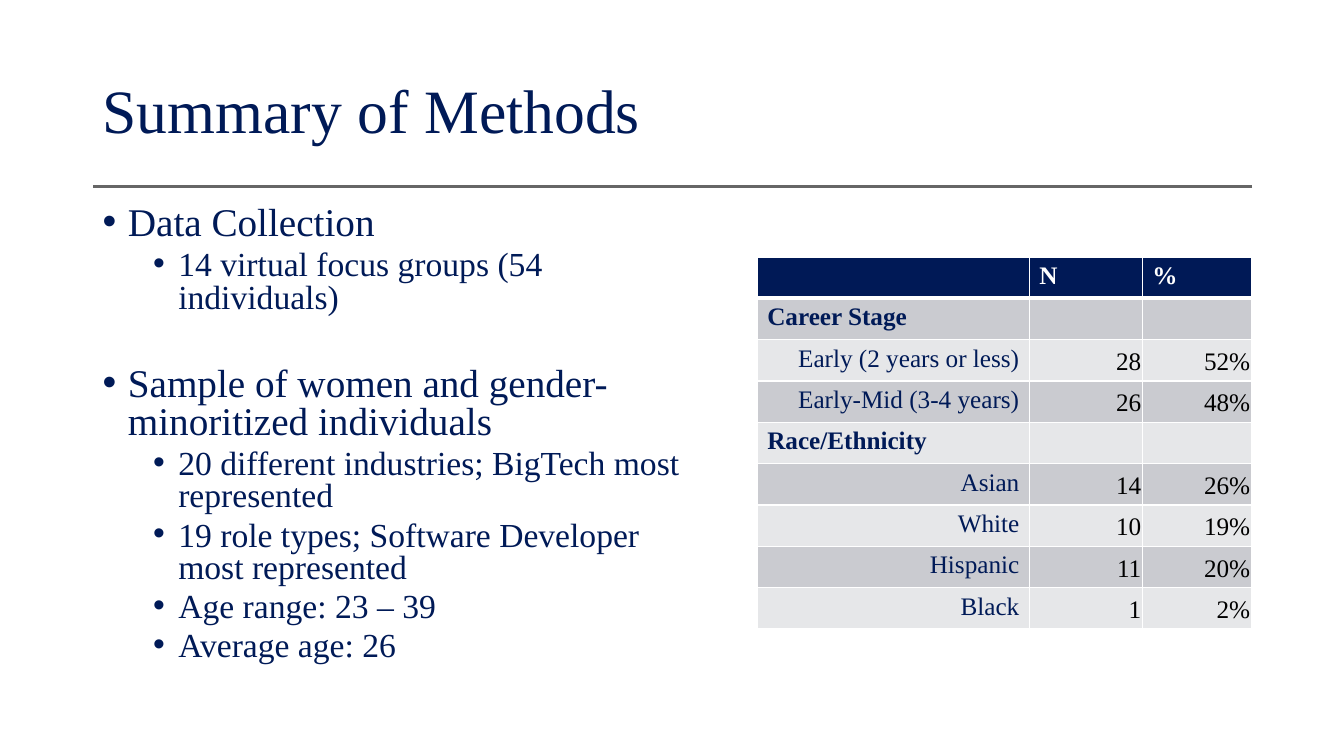
from dataclasses import dataclass

import pptx
import pptx.dml.color
import pptx.enum.shapes
import pptx.enum.text
import pptx.oxml
import pptx.oxml.ns
import pptx.util
from pptx.util import Inches

ALIGN = pptx.enum.text.PP_ALIGN
ANCHOR = pptx.enum.text.MSO_ANCHOR


@dataclass(frozen=True)
class Theme:
    font: str = "Times New Roman"
    navy: str = "001A57"
    header: str = "001956"
    bands: tuple = ("CACBD0", "E6E7E9")
    rule: str = "666666"
    white: str = "FFFFFF"
    black: str = "000000"
    title: int = 44
    topic: int = 28
    detail: int = 24
    cell: int = 18


THEME = Theme()

METHODS = [
    (0, "Data Collection", 0),
    (1, "14 virtual focus groups (54 individuals)", 5),
    (0, "Sample of women and gender-minoritized individuals", 37),
    (1, "20 different industries; BigTech most represented", 5),
    (1, "19 role types; Software Developer most represented", 5),
    (1, "Age range: 23 – 39", 5),
    (1, "Average age: 26", 5),
]

SAMPLE = [
    ("", "N", "%"),
    ("Career Stage", "", ""),
    ("Early (2 years or less)", "28", "52%"),
    ("Early-Mid (3-4 years)", "26", "48%"),
    ("Race/Ethnicity", "", ""),
    ("Asian", "14", "26%"),
    ("White", "10", "19%"),
    ("Hispanic", "11", "20%"),
    ("Black", "1", "2%"),
]


def rgb(color):
    return pptx.dml.color.RGBColor.from_string(color)


def add_xml(parent, xml):
    parent.append(pptx.oxml.parse_xml(
        xml.replace(" ", f" {pptx.oxml.ns.nsdecls('a')} ", 1)))


def style_runs(paragraph, size, color, bold=False):
    for run in paragraph.runs:
        run.font.name = THEME.font
        run.font.size = pptx.util.Pt(size)
        run.font.bold = bold
        run.font.color.rgb = rgb(color)


def add_text_frame(slide, left, top, width, height, anchor):
    frame = slide.shapes.add_textbox(
        Inches(left), Inches(top), Inches(width), Inches(height)).text_frame
    frame.word_wrap = True
    frame.vertical_anchor = anchor
    return frame


def add_title(slide, wording):
    frame = add_text_frame(slide, 0.92, 0.4, 11.5, 1.45, ANCHOR.MIDDLE)
    frame.text = wording
    heading = frame.paragraphs[0]
    heading.line_spacing = 0.9
    style_runs(heading, THEME.title, THEME.navy)


def add_rule(slide):
    rule = slide.shapes.add_connector(
        pptx.enum.shapes.MSO_CONNECTOR.STRAIGHT,
        Inches(12.42), Inches(1.85), Inches(0.92), Inches(1.85))
    rule.line.color.rgb = rgb(THEME.rule)
    rule.line.width = pptx.util.Pt(1.5)
    add_xml(rule._element.spPr, "<a:effectLst />")


def add_bullets(slide, points):
    frame = add_text_frame(slide, 0.92, 2, 6.22, 4.76, ANCHOR.TOP)
    frame.text = "\n".join(wording for _, wording, _ in points)
    for point, (level, _, gap) in zip(frame.paragraphs, points):
        properties = point._p.get_or_add_pPr()
        properties.set("marL", str(Inches(0.25 + 0.5 * level)))
        properties.set("indent", str(Inches(-0.25)))
        add_xml(properties, f'<a:buClr ><a:srgbClr val="{THEME.navy}"/></a:buClr>')
        add_xml(properties, '<a:buFont typeface="Arial"/>')
        add_xml(properties, '<a:buChar char="•"/>')
        point.level = level
        point.line_spacing = 0.8
        if gap:
            point.space_before = pptx.util.Pt(gap)
        style_runs(point, THEME.detail if level else THEME.topic, THEME.navy)


def add_borders(cell, top, bottom):
    for side, width in (("L", 1), ("R", 1), ("T", top), ("B", bottom)):
        add_xml(cell._tc.get_or_add_tcPr(),
                f'<a:ln{side} w="{pptx.util.Pt(width)}"><a:solidFill>'
                f'<a:srgbClr val="{THEME.white}"/></a:solidFill></a:ln{side}>')


def fill_cell(cell, wording, row, column, is_group):
    is_header = row == 0
    add_borders(cell, 3 if row == 1 else 1, 3 if is_header else 1)
    cell.fill.solid()
    cell.fill.fore_color.rgb = rgb(
        THEME.header if is_header else THEME.bands[(row - 1) % 2])
    cell.text = wording
    paragraph = cell.text_frame.paragraphs[0]
    paragraph.font.size = pptx.util.Pt(THEME.cell)
    is_figure = column > 0 and not is_header and not is_group
    if is_figure:
        cell.vertical_anchor = ANCHOR.BOTTOM
        cell.margin_left = cell.margin_right = cell.margin_top = Inches(0.01)
    if not is_header and not is_group:
        paragraph.alignment = ALIGN.RIGHT
    color = THEME.white if is_header else THEME.black if is_figure else THEME.navy
    style_runs(paragraph, THEME.cell, color, is_header or is_group)


def add_sample_table(slide, rows):
    widths = (2.7, 1.12, 1.08)
    row_height = 0.41
    table = slide.shapes.add_table(
        len(rows), len(widths), Inches(7.51), Inches(2.55),
        Inches(sum(widths)), Inches(row_height * len(rows))).table
    for column, width in zip(table.columns, widths):
        column.width = Inches(width)
    for row, values in enumerate(rows):
        table.rows[row].height = Inches(row_height)
        is_group = row > 0 and not values[1]
        for column, wording in enumerate(values):
            fill_cell(table.cell(row, column), wording, row, column, is_group)


def main():
    deck = pptx.Presentation()
    deck.slide_width, deck.slide_height = Inches(13.33), Inches(7.5)
    slide = deck.slides.add_slide(deck.slide_layouts[6])
    add_rule(slide)
    add_title(slide, "Summary of Methods")
    add_bullets(slide, METHODS)
    add_sample_table(slide, SAMPLE)
    deck.save("out.pptx")


if __name__ == "__main__":
    main()
